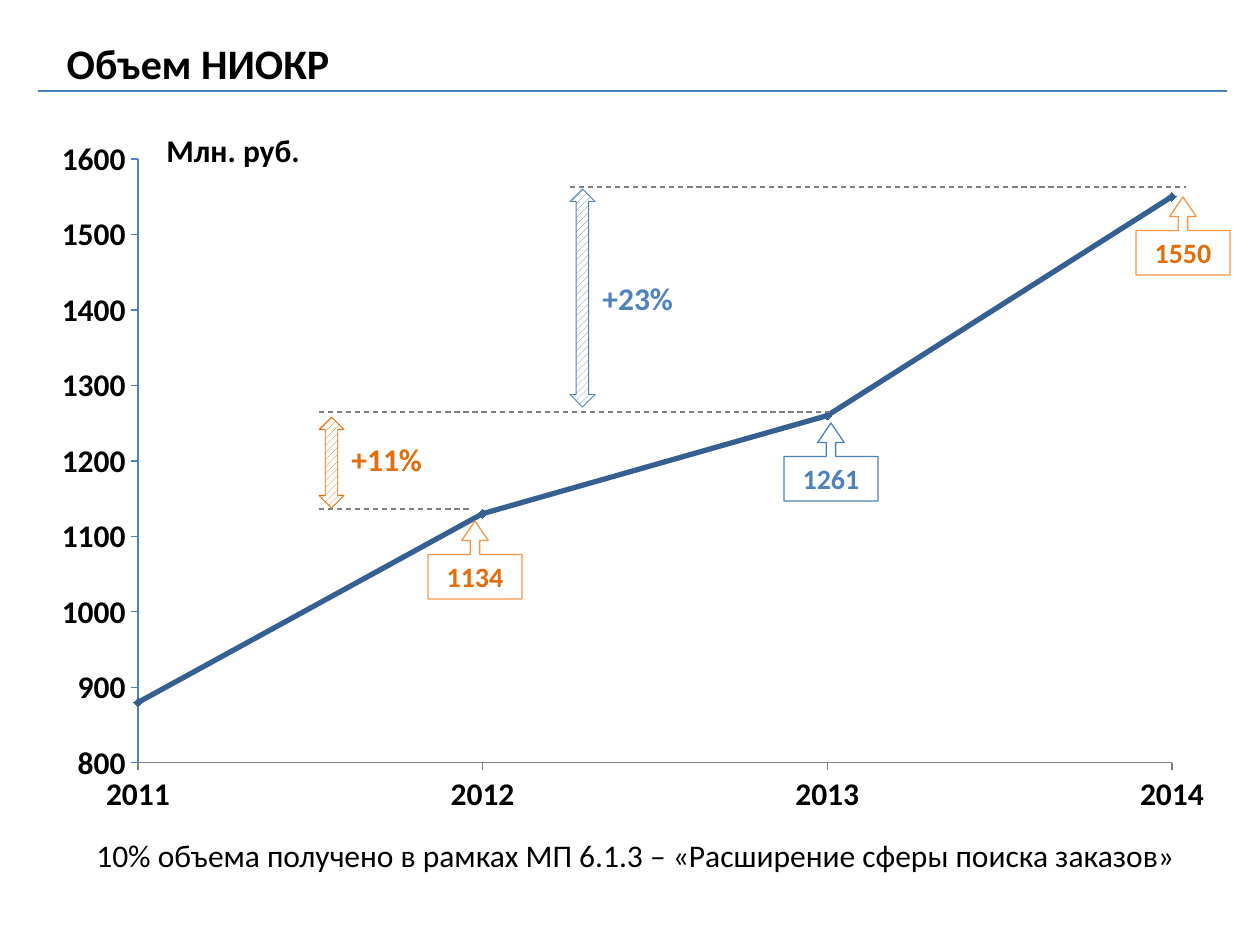
from lxml.etree import SubElement
from pptx import Presentation
from pptx.chart.data import XyChartData
from pptx.dml.color import RGBColor
from pptx.enum.chart import XL_CHART_TYPE as Chart, XL_MARKER_STYLE as Marker, XL_TICK_MARK as Tick
from pptx.enum.dml import MSO_LINE as Dash, MSO_PATTERN as Pattern
from pptx.enum.shapes import MSO_CONNECTOR as Link, MSO_SHAPE as Shape
from pptx.enum.text import MSO_ANCHOR as Anchor, MSO_AUTO_SIZE as Fit, PP_ALIGN as Align
from pptx.oxml.ns import qn
from pptx.util import Pt

SCALE = 914400 / 126
FONT = "Calibri"
BLACK = RGBColor(0x00, 0x00, 0x00)
WHITE = RGBColor(0xFF, 0xFF, 0xFF)
GRAY = RGBColor(0x80, 0x80, 0x80)
BLUE = RGBColor(0x4F, 0x81, 0xBD)
RULE = RGBColor(0x4B, 0x7E, 0xBC)
NAVY = RGBColor(0x37, 0x60, 0x92)
TEAL = RGBColor(0x31, 0x85, 0x9C)
ORANGE = RGBColor(0xE4, 0x6C, 0x0A)
AMBER = RGBColor(0xF7, 0x96, 0x46)
VOLUMES = {2011: 880, 2012: 1130, 2013: 1260, 2014: 1550}


def px(*nums):
    return [round(n * SCALE) for n in nums]


def style(font, size, color=BLACK, bold=True):
    font.name, font.size, font.bold = FONT, Pt(size), bold
    font.color.rgb = color


def write(frame, text, size, color=BLACK, bold=True):
    frame.text = text
    style(frame.paragraphs[0].runs[0].font, size, color, bold)


def add_title(slide, text, box):
    title = slide.shapes.title
    title.left, title.top, title.width, title.height = px(*box)
    write(title.text_frame, text, 24)
    title.text_frame.vertical_anchor = Anchor.TOP
    title.text_frame.auto_size = Fit.NONE
    title.text_frame.paragraphs[0].alignment = Align.LEFT


def add_label(slide, text, box, color=BLACK, bold=True, wrap=True):
    frame = slide.shapes.add_textbox(*px(*box)).text_frame
    frame.word_wrap = wrap
    write(frame, text, 18, color, bold)


def add_rule(slide, left, right, y, color=GRAY, dash=Dash.DASH):
    rule = slide.shapes.add_connector(Link.STRAIGHT, *px(left, y, right, y))
    rule.line.color.rgb = color
    rule.line.width = Pt(0.75)
    rule.line.dash_style = dash
    SubElement(rule._element.spPr, qn("a:effectLst"))


def add_growth(slide, text, left, top, height, label, color):
    arrow = slide.shapes.add_shape(Shape.UP_DOWN_ARROW, *px(left, top, 25, height))
    arrow.shadow.inherit = False
    arrow.fill.patterned()
    arrow.fill.pattern = Pattern.WIDE_UPWARD_DIAGONAL
    arrow.fill.fore_color.rgb = color
    arrow.fill.back_color.rgb = WHITE
    arrow.line.color.rgb = color
    arrow.line.width = Pt(0.5)
    add_label(slide, text, (left + 20, label, 97, 50), color, wrap=False)


def add_callout(slide, text, left, top, color, edge):
    note = slide.shapes.add_shape(Shape.UP_ARROW_CALLOUT, *px(left, top, 94, 78))
    note.shadow.inherit = False
    for i, ratio in enumerate((0.12, 0.17, 0.25, 0.57)):
        note.adjustments[i] = ratio
    note.fill.solid()
    note.fill.fore_color.rgb = WHITE
    note.line.color.rgb = edge
    note.line.width = Pt(0.75)
    write(note.text_frame, text, 16, color)
    note.text_frame.vertical_anchor = Anchor.MIDDLE
    note.text_frame.paragraphs[0].alignment = Align.CENTER


def set_axis(axis, low, high, step, color):
    axis.minimum_scale, axis.maximum_scale, axis.major_unit = low, high, step
    axis.has_major_gridlines = False
    axis.major_tick_mark = Tick.OUTSIDE
    axis.minor_tick_mark = Tick.NONE
    axis.format.line.color.rgb = color
    axis.format.line.width = Pt(0.75)
    axis.tick_labels.number_format = "0"
    axis.tick_labels.number_format_is_linked = False
    style(axis.tick_labels.font, 18)


def set_layout(chart, **sizes):
    """Pin the inner plot area to fractions of the chart."""
    area = chart._chartSpace.chart.plotArea
    layout = area.find(qn("c:layout"))
    if layout is None:
        layout = SubElement(area, qn("c:layout"))
        area.insert(0, layout)
    manual = SubElement(layout, qn("c:manualLayout"))
    parts = {"layoutTarget": "inner", "xMode": "edge", "yMode": "edge", **sizes}
    for tag, val in parts.items():
        SubElement(manual, qn("c:" + tag)).set("val", str(val))


def add_graph(slide, box):
    data = XyChartData()
    points = data.add_series("Объем НИОКР")
    for year, volume in VOLUMES.items():
        points.add_data_point(year, volume)
    chart = slide.shapes.add_chart(Chart.XY_SCATTER_LINES, *px(*box), data).chart
    chart.has_legend = chart.has_title = False
    style(chart.font, 10, bold=False)
    set_axis(chart.category_axis, 2011, 2014, 1, GRAY)
    set_axis(chart.value_axis, 800, 1600, 100, BLUE)
    wide, high = box[2:]
    set_layout(chart, x=100 / wide, y=34 / high, w=1034 / wide, h=604 / high)
    chart.plots[0].vary_by_categories = False
    line = chart.plots[0].series[0]
    line.smooth = False
    line.format.line.color.rgb = NAVY
    line.format.line.width = Pt(3)
    line.marker.style, line.marker.size = Marker.DIAMOND, 5
    line.marker.format.fill.solid()
    line.marker.format.fill.fore_color.rgb = TEAL
    line.marker.format.line.color.rgb = NAVY


def main():
    deck = Presentation()
    deck.slide_width, deck.slide_height = px(1260, 945)
    slide = deck.slides.add_slide(deck.slide_layouts[5])
    add_title(slide, "Объем НИОКР", (54, 31, 776, 63))
    add_graph(slide, (38, 125, 1189, 702))
    add_rule(slide, 38, 1227, 91, RULE, Dash.SOLID)
    for left, right, y in ((319, 469, 509), (319, 833, 412), (570, 1186, 187)):
        add_rule(slide, left, right, y)
    add_growth(slide, "+23%", 570, 189, 218, 273, BLUE)
    add_growth(slide, "+11%", 319, 417, 91, 434, ORANGE)
    add_callout(slide, "1134", 428, 521, ORANGE, AMBER)
    add_callout(slide, "1261", 784, 423, BLUE, BLUE)
    add_callout(slide, "1550", 1136, 197, ORANGE, AMBER)
    add_label(slide, "Млн. руб.", (154, 125, 176, 50))
    add_label(slide, "10% объема получено в рамках МП 6.1.3 – «Расширение сферы поиска заказов»",
              (84, 830, 1131, 50), bold=False)
    deck.save("out.pptx")


if __name__ == "__main__":
    main()
